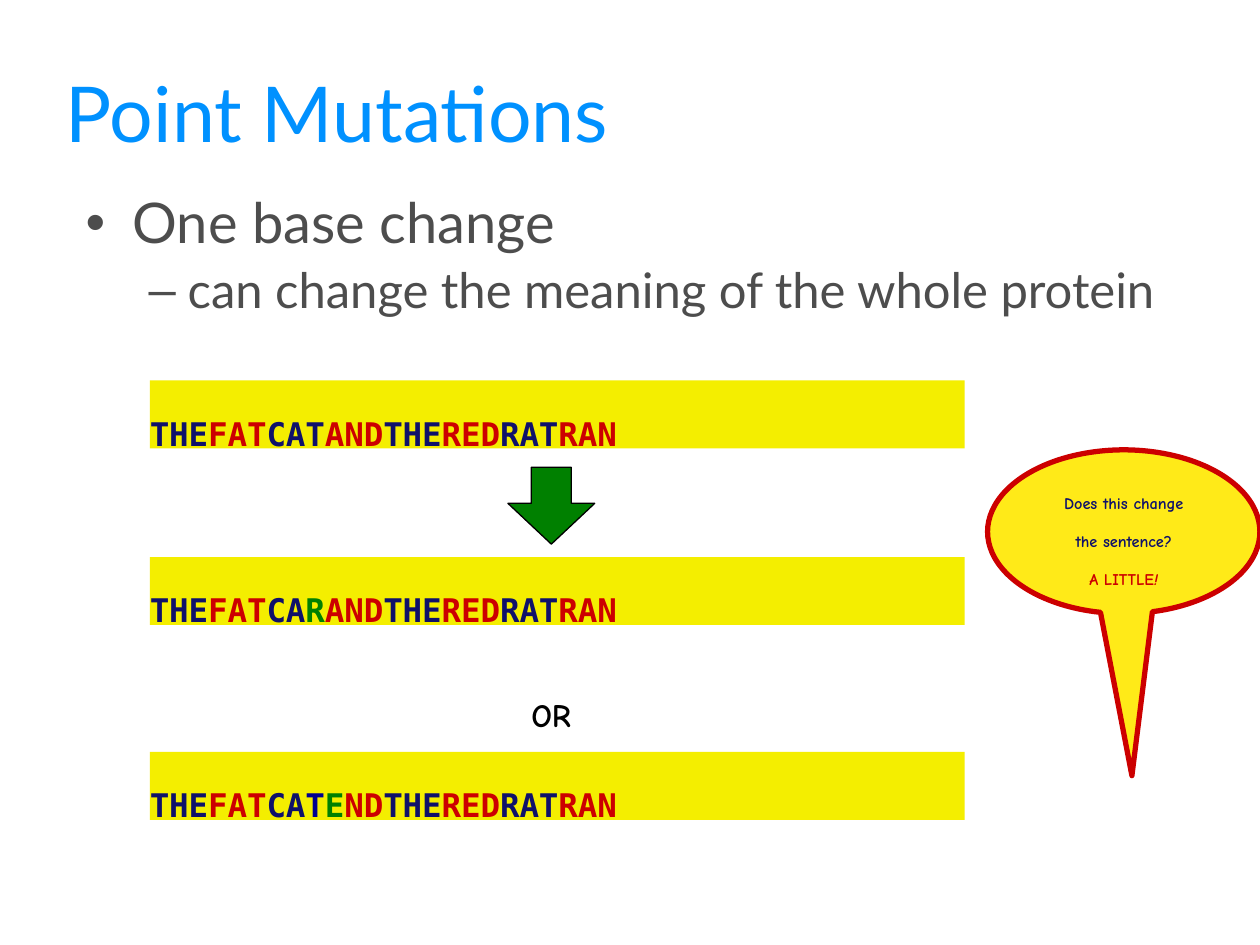
from lxml import etree
from pptx import Presentation
from pptx.dml.color import RGBColor
from pptx.enum.shapes import MSO_SHAPE
from pptx.enum.text import MSO_ANCHOR, MSO_AUTO_SIZE, PP_ALIGN
from pptx.oxml.ns import qn
from pptx.util import Cm, Pt

RECT, ARROW = MSO_SHAPE.RECTANGLE, MSO_SHAPE.DOWN_ARROW
CALLOUT = MSO_SHAPE.OVAL_CALLOUT
MIDDLE, NO_FIT = MSO_ANCHOR.MIDDLE, MSO_AUTO_SIZE.NONE
LEFT, CENTER = PP_ALIGN.LEFT, PP_ALIGN.CENTER

BLUE = RGBColor(0x00, 0x91, 0xFF)
GRAY = RGBColor(0x4D, 0x4D, 0x4D)
NAVY = RGBColor(0x0F, 0x11, 0x6A)
DARK_BLUE = RGBColor(0x00, 0x00, 0x90)
RED = RGBColor(0xCC, 0x00, 0x00)
GREEN = RGBColor(0x00, 0x80, 0x00)
BLACK = RGBColor(0x00, 0x00, 0x00)
YELLOW = RGBColor(0xF4, 0xEE, 0x00)
GOLD = RGBColor(0xFF, 0xEA, 0x18)

SANS, MONO, COMIC = "Lato", "DejaVu Sans Mono", "Comic Neue"

# Content
TITLE = "Point Mutations"
# text, level, size, bullet, left margin, hanging indent
BULLETS = [
    ("One base change", 0, 32, "•", Cm(0.95), Cm(-0.95)),
    ("can change the meaning of the whole protein", 1, 28, "–", Cm(2.06), Cm(-0.79)),
]
START = [("THE", NAVY), ("FAT", RED)]
END = [("THE", NAVY), ("RED", RED), ("RAT", NAVY), ("RAN", RED)]
# top of the band, codons that differ between the sentences
SENTENCES = [
    (Cm(7.67), [("CAT", NAVY), ("AND", RED)]),
    (Cm(11.23), [("CA", NAVY), ("R", GREEN), ("AND", RED)]),
    (Cm(15.16), [("CA", NAVY), ("T", DARK_BLUE), ("E", GREEN), ("ND", RED)]),
]
QUESTION = "Does this change\vthe sentence?"
ANSWER = [("A LITTLE", RED), ("!", RED)]


def place(sp, left, top, width, height):
    sp.left, sp.top, sp.width, sp.height = left, top, width, height


def style(font, name, size, color):
    font.name, font.size, font.color.rgb = name, Pt(size), color


def add_shape(kind, box, fill, line=None, weight=0):
    sp = slide.shapes.add_shape(kind, *box)
    sp.shadow.inherit = False
    sp.fill.solid()
    sp.fill.fore_color.rgb = fill
    if line is None:
        sp.line.fill.background()
    else:
        sp.line.color.rgb = line
        sp.line.width = Pt(weight)
    return sp


def prepare(sp):
    tf = sp.text_frame
    tf.margin_left = tf.margin_right = tf.margin_top = tf.margin_bottom = 0
    tf.vertical_anchor = MIDDLE
    tf.word_wrap = True
    return tf


def write_lowered(p, parts, name, size, align):
    """Write bold coloured runs set below the baseline."""
    p.alignment = align
    for text, color in parts:
        start = len(p.runs)
        for i, piece in enumerate(text.split("\v")):
            if i:
                p.add_line_break()
            p.add_run().text = piece
        for r in p.runs[start:]:
            style(r.font, name, size, color)
            r.font.bold = True
        for rPr in p._p.iter(qn("a:rPr")):
            rPr.set("baseline", "-25000")
            rPr.set("sz", str(size * 100))


prs = Presentation()
prs.slide_width, prs.slide_height = Cm(25.4), Cm(19.05)
slide = prs.slides.add_slide(prs.slide_layouts[1])

# Title
title, body = slide.placeholders
place(title, Cm(1.07), Cm(1.27), Cm(20.32), Cm(1.98))
tf = title.text_frame
tf.text = TITLE
tf.auto_size, tf.vertical_anchor = NO_FIT, MIDDLE
p = tf.paragraphs[0]
p.alignment = LEFT
style(p.runs[0].font, SANS, 44, BLUE)

# Bullet list
place(body, Cm(1.47), Cm(3.81), Cm(23.93), Cm(5.41))
tf = body.text_frame
tf.text = "\n".join(item[0] for item in BULLETS)
tf.auto_size = NO_FIT
for p, (_, level, size, bullet, margin, indent) in zip(tf.paragraphs, BULLETS):
    p.level = level
    p.line_spacing = 0.9
    p.space_before = Pt(6 * level)
    pPr = p._p.get_or_add_pPr()
    pPr.set("marL", str(margin))
    pPr.set("indent", str(indent))
    etree.SubElement(pPr, qn("a:buChar"), char=bullet)
    style(p.runs[0].font, SANS, size, GRAY)

# Sentence bands
for top, codons in SENTENCES:
    band = add_shape(RECT, (Cm(3.02), top, Cm(16.43), Cm(1.37)), YELLOW)
    p = prepare(band).paragraphs[0]
    write_lowered(p, START + codons + END, MONO, 32, LEFT)

# Arrow from the first sentence to its mutation
arrow = add_shape(ARROW, (Cm(10.24), Cm(9.42), Cm(1.75), Cm(1.55)), GREEN, BLACK, 0.75)
arrow.adjustments[0], arrow.adjustments[1] = 0.46, 0.53

# "OR" between the two mutations
label = slide.shapes.add_textbox(Cm(10.03), Cm(13.13), Cm(2.16), Cm(1.63))
label.text_frame.word_wrap = True
write_lowered(label.text_frame.paragraphs[0], [("OR", BLACK)], COMIC, 32, CENTER)

# Callout
callout = add_shape(CALLOUT, (Cm(19.91), Cm(9.07), Cm(5.49), Cm(3.3)), GOLD, RED, 3)
callout.adjustments[0], callout.adjustments[1] = 0.03, 1.49
tf = prepare(callout)
write_lowered(tf.paragraphs[0], [(QUESTION, NAVY)], COMIC, 16, CENTER)
p = tf.add_paragraph()
write_lowered(p, ANSWER, COMIC, 16, CENTER)
p.runs[-1].font.italic = True

prs.save("out.pptx")
